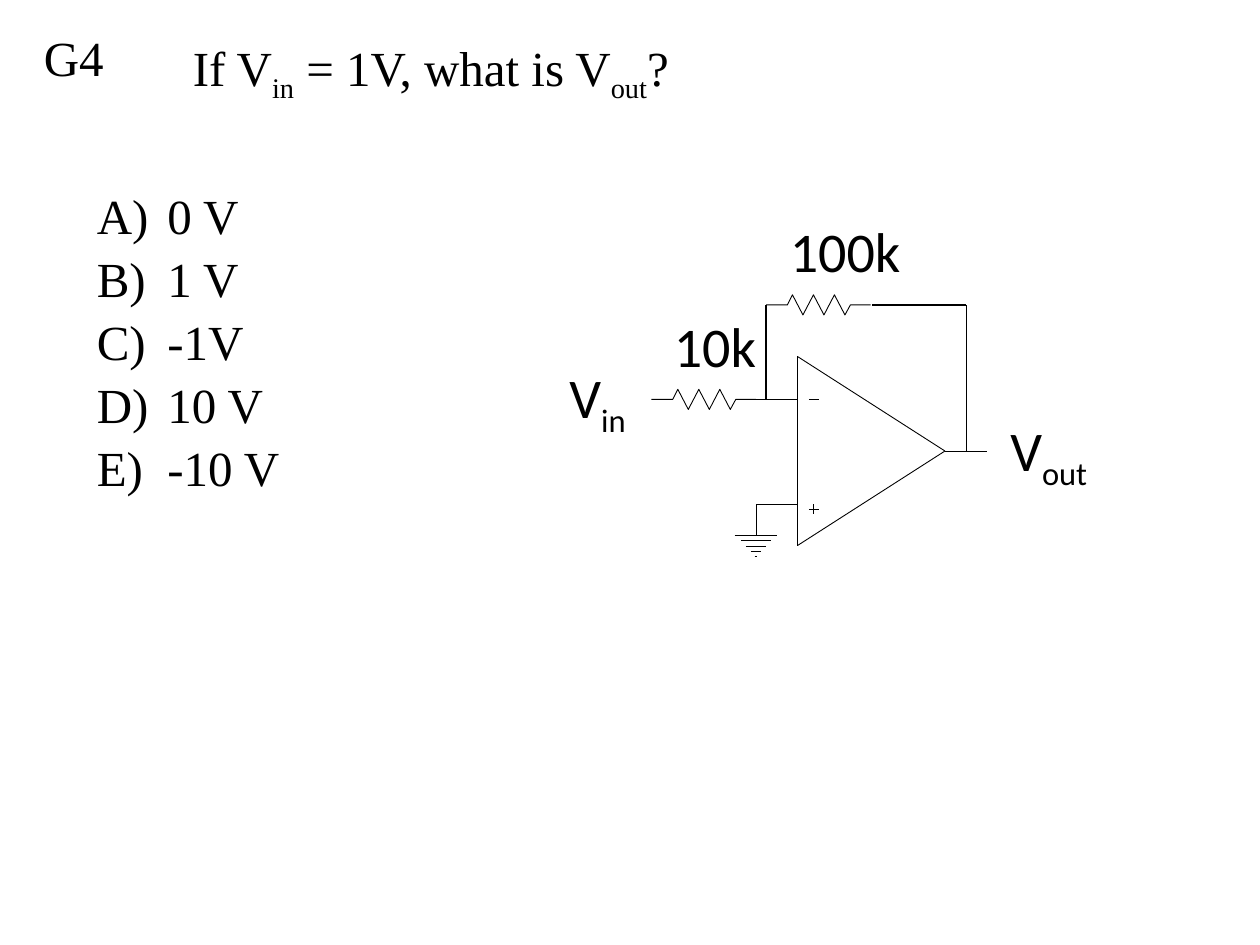
import lxml.etree
import pptx
import pptx.dml.color
import pptx.enum.shapes
import pptx.enum.text
import pptx.oxml.ns
import pptx.util

Inches, Pt = pptx.util.Inches, pptx.util.Pt
THEME = {
    "ink": pptx.dml.color.RGBColor(0, 0, 0),
    "question_font": ("Times New Roman", 28),
    "circuit_font": ("Calibri", 32),
    "thin": 0.5,
    "wire": 0.75,
}

# Text is a list of (words, is_subscript) spans.
QUESTION = [("If V", False), ("in", True), (" = 1V, what is V", False),
            ("out", True), ("?", False)]
NUMBER = [("G4", False)]
ANSWERS = ["0 V", "1 V", "-1V", "10 V", "-10 V"]
CIRCUIT_LABELS = [
    ([("10k", False)], (5.25, 2.42, 0.86, 0.64)),
    ([("100k", False)], (6.17, 1.67, 1.09, 0.64)),
    ([("V", False), ("in", True)], (4.42, 2.83, 0.68, 0.64)),
    ([("V", False), ("out", True)], (7.92, 3.25, 0.85, 0.64)),
]

# Circuit nodes
MINUS_Y, PLUS_Y, OUTPUT_Y, FEEDBACK_Y = 3.17, 4, 3.58, 2.42
GROUND_X, GROUND_Y, JOIN_X, FEEDBACK_X = 6, 4.25, 6.08, 7.67
AMPLIFIER = [(7.5, OUTPUT_Y), (6.33, 4.33), (6.33, 2.83)]
THIN_LINES = [
    (6, MINUS_Y, 6.33, MINUS_Y),
    (GROUND_X, PLUS_Y, 6.33, PLUS_Y),
    (7.5, OUTPUT_Y, 7.83, OUTPUT_Y),
    (6.42, MINUS_Y, 6.5, MINUS_Y),    # minus sign
    (6.46, 4, 6.46, 4.08),            # plus sign
    (6.42, 4.04, 6.5, 4.04),
    (GROUND_X, PLUS_Y, GROUND_X, GROUND_Y),
]
FEEDBACK_WIRES = [
    (JOIN_X, FEEDBACK_Y, JOIN_X, MINUS_Y),
    (FEEDBACK_X, OUTPUT_Y, FEEDBACK_X, FEEDBACK_Y),
    (6.92, FEEDBACK_Y, FEEDBACK_X, FEEDBACK_Y),
]
RESISTORS = [(5.17, MINUS_Y), (JOIN_X, FEEDBACK_Y)]
GROUND_HALF_WIDTHS = [0.17, 0.12, 0.08, 0.04, 0.01]


def format_span(span, font, is_subscript=False):
    span.font.name, size = font
    span.font.size = Pt(size)
    span.font.color.rgb = THEME["ink"]
    if is_subscript:
        span.font._element.set("baseline", "-25000")


def add_box(slide, place, wrap):
    box = slide.shapes.add_textbox(*map(Inches, place))
    box.text_frame.word_wrap = wrap
    return box.text_frame


def add_label(slide, spans, place, font, wrap=False):
    frame = add_box(slide, place, wrap)
    for words, is_subscript in spans:
        span = frame.paragraphs[0].add_run()
        span.text = words
        format_span(span, font, is_subscript)
    return frame


def add_answers(slide):
    frame = add_box(slide, (0.67, 0.92, 9, 4.64), True)
    frame.margin_top = Inches(0.55)
    frame.text = "\n".join(ANSWERS)
    for para in frame.paragraphs:
        para.space_after = Pt(2.5)
        format_span(para.runs[0], THEME["question_font"])
        properties = para._p.get_or_add_pPr()
        properties.set("marL", str(Inches(0.56)))
        properties.set("indent", str(-Inches(0.56)))
        numbering = lxml.etree.SubElement(
            properties, pptx.oxml.ns.qn("a:buAutoNum"))
        numbering.set("type", "alphaUcParenR")


def set_stroke(shape, width):
    shape.line.color.rgb = THEME["ink"]
    shape.line.width = Pt(width)


def add_line(slide, ends, width):
    line = slide.shapes.add_connector(
        pptx.enum.shapes.MSO_CONNECTOR.STRAIGHT, *map(Inches, ends))
    set_stroke(line, width)
    lxml.etree.SubElement(line._element.spPr, pptx.oxml.ns.qn("a:effectLst"))


def add_outline(slide, points, close):
    points = [(Inches(x), Inches(y)) for x, y in points]
    builder = slide.shapes.build_freeform(*points[0])
    builder.add_line_segments(points[1:], close=close)
    shape = builder.convert_to_shape()
    shape.shadow.inherit = False
    shape.fill.background()
    set_stroke(shape, THEME["thin"])


def resistor_points(left, y):
    """Two leads with six alternating peaks between them."""
    peaks = [(left + 0.21 + i / 12, y + (0.08 if i % 2 else -0.08))
             for i in range(6)]
    return [(left, y), (left + 0.17, y), *peaks,
            (left + 0.67, y), (left + 0.83, y)]


def add_circuit(slide):
    for ends in THIN_LINES:
        add_line(slide, ends, THEME["thin"])
    for ends in FEEDBACK_WIRES:
        add_line(slide, ends, THEME["wire"])
    for i, half in enumerate(GROUND_HALF_WIDTHS):
        y = GROUND_Y + i / 24
        add_line(slide, (GROUND_X - half, y, GROUND_X + half, y), THEME["thin"])
    add_outline(slide, AMPLIFIER, True)
    for left, y in RESISTORS:
        add_outline(slide, resistor_points(left, y), False)
    for spans, place in CIRCUIT_LABELS:
        add_label(slide, spans, place, THEME["circuit_font"])


def main():
    deck = pptx.Presentation()
    deck.slide_width, deck.slide_height = Inches(10), Inches(7.5)
    page = deck.slides.add_slide(deck.slide_layouts[6])
    question = add_label(page, QUESTION, (1.33, 0.25, 8.25, 0.57),
                         THEME["question_font"], wrap=True)
    question.margin_left = Inches(0.2)
    add_label(page, NUMBER, (0.25, 0.17, 0.68, 0.57), THEME["question_font"])
    add_circuit(page)
    add_answers(page)
    deck.save("out.pptx")


if __name__ == "__main__":
    main()
